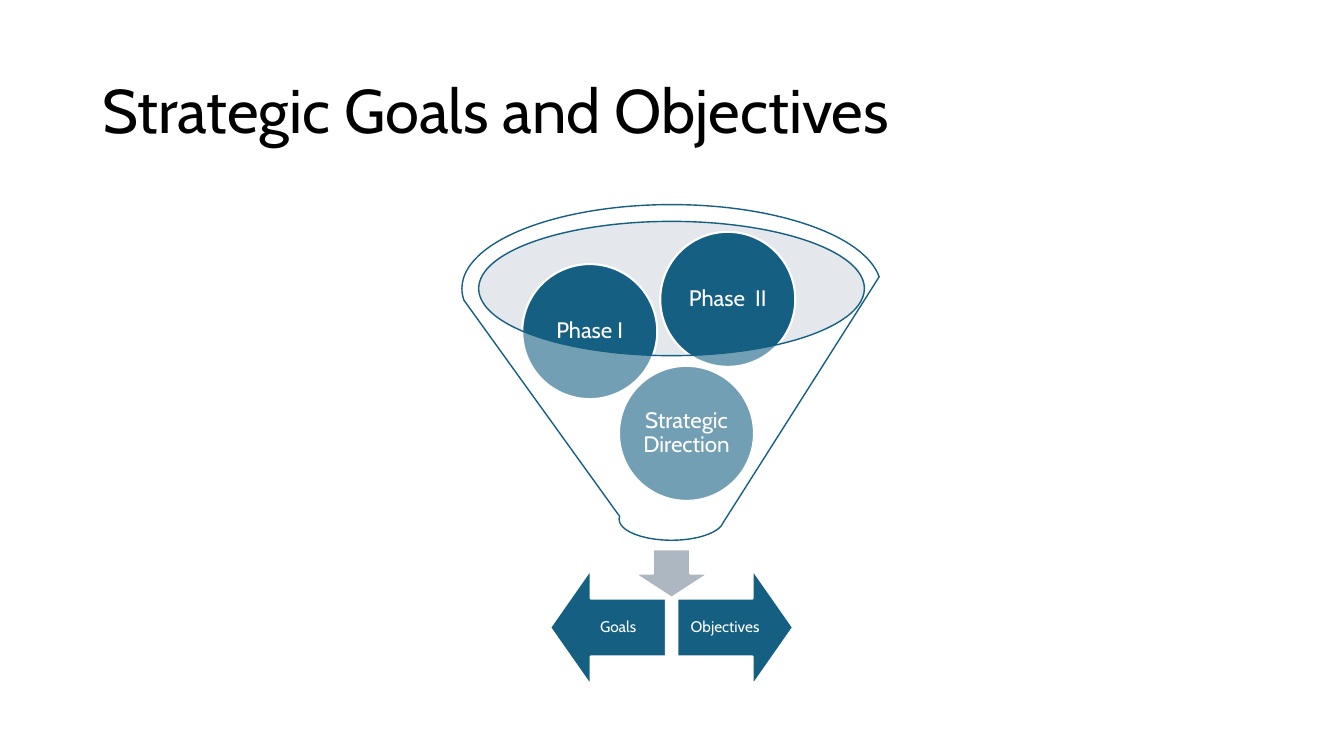
import pptx
import pptx.util
import pptx.dml.color
import pptx.enum.shapes
import pptx.enum.text
import pptx.oxml

SHAPE = pptx.enum.shapes.MSO_SHAPE
ALIGN = pptx.enum.text.PP_ALIGN
BLUE, GREY, MIST, WHITE, BLACK = "156082", "ACB7C1", "BDC5CD", "FFFFFF", "000000"


def color(hex_code):
    return pptx.dml.color.RGBColor.from_string(hex_code)


class Deck:
    """Draws styled elements, placed by centre and size in percent of the slide."""

    font = "Cabin"

    def __init__(self, width, height):
        self.prs = pptx.Presentation()
        self.prs.slide_width = pptx.util.Inches(width)
        self.prs.slide_height = pptx.util.Inches(height)
        self.s = self.prs.slides.add_slide(self.prs.slide_layouts[6])

    def box(self, cx, cy, w, h):
        across, down = self.prs.slide_width / 100, self.prs.slide_height / 100
        return (round((cx - w / 2) * across), round((cy - h / 2) * down),
                round(w * across), round(h * down))

    def shape(self, kind, area, fill, line=WHITE, weight=1.5, opacity=100,
              rotation=0, adjustments=()):
        sp = self.s.shapes.add_shape(kind, *self.box(*area))
        sp.shadow.inherit = False
        sp.rotation = rotation
        for i, value in enumerate(adjustments):
            sp.adjustments[i] = value
        sp.fill.solid()
        sp.fill.fore_color.rgb = color(fill)
        if opacity < 100:
            clr = sp.fill._xPr.solidFill.find(pptx.oxml.ns.qn("a:srgbClr"))
            alpha = pptx.oxml.parse_xml(
                f'<a:alpha {pptx.oxml.ns.nsdecls("a")} val="{opacity * 1000}"/>')
            clr.append(alpha)
        if line:
            sp.line.color.rgb = color(line)
            sp.line.width = pptx.util.Pt(weight)
        else:
            sp.line.fill.background()

    def text(self, text, area, size, ink=WHITE, align=ALIGN.CENTER, inset=0.02):
        tf = self.s.shapes.add_textbox(*self.box(*area)).text_frame
        margin = pptx.util.Inches(inset)
        frame = {"word_wrap": True, "vertical_anchor": pptx.enum.text.MSO_ANCHOR.MIDDLE,
                 "margin_left": margin, "margin_right": margin,
                 "margin_top": margin, "margin_bottom": margin}
        for name, value in frame.items():
            setattr(tf, name, value)
        p = tf.paragraphs[0]
        p.alignment, p.line_spacing = align, 0.9
        r = p.add_run()
        r.text = text
        for name, value in {"name": self.font, "size": pptx.util.Pt(size)}.items():
            setattr(r.font, name, value)
        r.font.color.rgb = color(ink)


def main():
    deck = Deck(13.333, 7.5)
    middle = 49.97
    deck.text("Strategic Goals and Objectives", (50, 15, 86.25, 19.33), 44,
              BLACK, ALIGN.LEFT, 0.1)
    deck.shape(SHAPE.OVAL, (middle, 38.07, 28.8, 17.73), MIST, line=None, opacity=40)
    deck.shape(SHAPE.DOWN_ARROW, (middle, 75.87, 5.55, 6.4), GREY)

    balls = [("Strategic Direction", 51.08, 57.33),
             ("Phase I", 43.88, 43.87),
             ("Phase  II", 54.15, 39.6)]
    for label, x, y in balls:
        deck.shape(SHAPE.OVAL, (x, y, 10.05, 17.87), BLUE)
        deck.text(label, (x, y, 7.13, 12.67), 16)
    deck.shape(SHAPE.FUNNEL, (middle, 49.27, 31.2, 44.4), WHITE, BLUE, 1, opacity=40)

    for label, side, rotation in [("Goals", -1, 270), ("Objectives", 1, 90)]:
        deck.shape(SHAPE.UP_ARROW, (middle + side * 4.73, 83, 8.63, 15.33), BLUE,
                   rotation=rotation, adjustments=(0.5, 0.35))
        deck.text(label, (middle + side * 3.98, 83, 7.13, 7.6), 11, inset=0.09)
    deck.prs.save("out.pptx")


if __name__ == "__main__":
    main()
